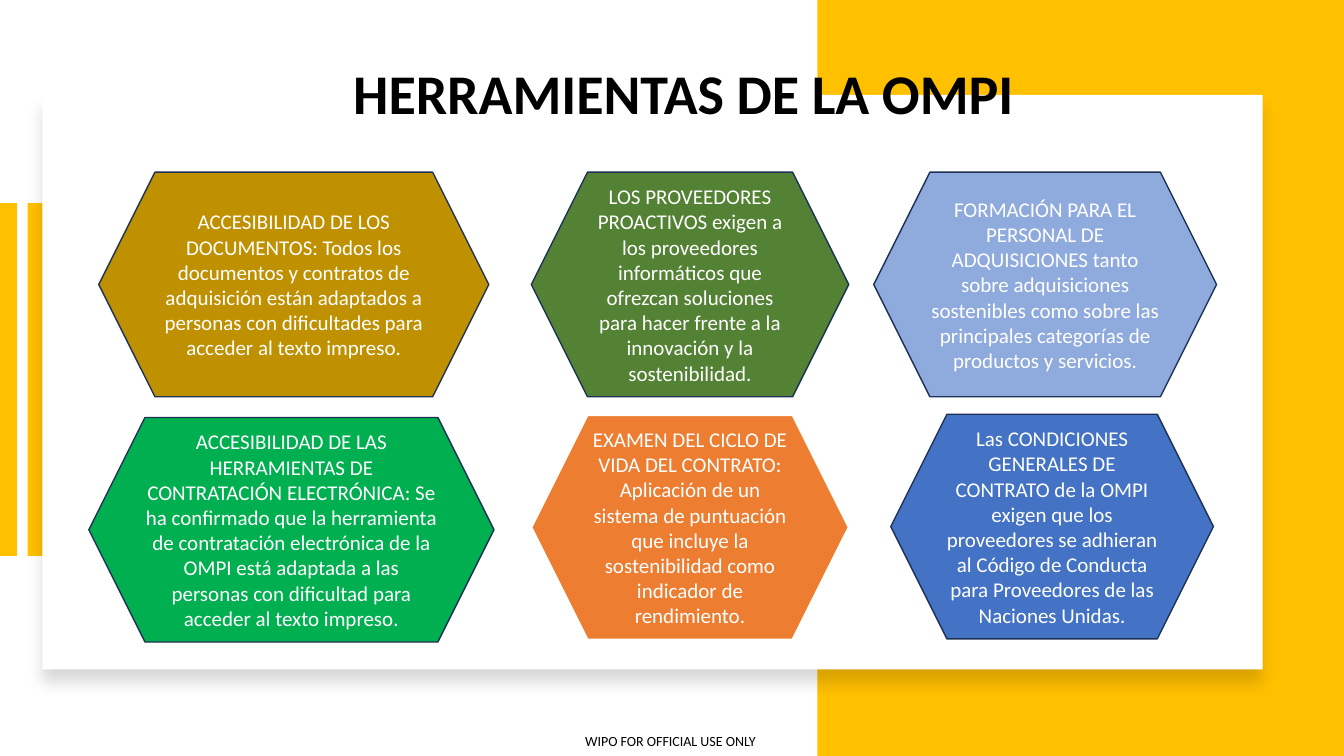
from lxml.etree import SubElement
from pptx import Presentation
from pptx.dml.color import RGBColor
from pptx.enum.shapes import MSO_SHAPE
from pptx.enum.text import MSO_ANCHOR, PP_ALIGN
from pptx.oxml.ns import qn
from pptx.util import Cm, Pt

TITLE = "HERRAMIENTAS DE LA OMPI"
FOOTER = "WIPO FOR OFFICIAL USE ONLY"
FONT = "Calibri"
YELLOW, WHITE, BLACK, NAVY = "FFC000", "FFFFFF", "000000", "1E3256"

# Lengths in cm
PAGE_WIDTH, PAGE_HEIGHT = 33.87, 19.05
HEXAGON_HEIGHT = 5.66
DEFAULT_INSETS = (0.25, 0.13)

# Left, top, width, fill, outline, outline points, (side, top) insets, text
TOOLS = [
    (2.49, 4.34, 9.83, "BF9000", NAVY, 1, (0.1, 0.13),
     "ACCESIBILIDAD DE LOS DOCUMENTOS: Todos los documentos y contratos de "
     "adquisición están adaptados a personas con dificultades para acceder "
     "al texto impreso."),
    (13.39, 4.34, 8, "548235", NAVY, 1, DEFAULT_INSETS,
     "LOS PROVEEDORES PROACTIVOS exigen a los proveedores informáticos que "
     "ofrezcan soluciones para hacer frente a la innovación y la "
     "sostenibilidad."),
    (22.02, 4.34, 8.64, "8FAADC", NAVY, 1, DEFAULT_INSETS,
     "FORMACIÓN PARA EL PERSONAL DE ADQUISICIONES tanto sobre adquisiciones "
     "sostenibles como sobre las principales categorías de productos y "
     "servicios."),
    (2.24, 10.52, 10.21, "00B050", NAVY, 1, (0.1, 0.2),
     "ACCESIBILIDAD DE LAS HERRAMIENTAS DE CONTRATACIÓN ELECTRÓNICA: Se ha "
     "confirmado que la herramienta de contratación electrónica de la OMPI "
     "está adaptada a las personas con dificultad para acceder al texto "
     "impreso."),
    (13.39, 10.46, 8, "ED7D31", WHITE, 1.5, DEFAULT_INSETS,
     "EXAMEN DEL CICLO DE VIDA DEL CONTRATO: Aplicación de un sistema de "
     "puntuación que incluye la sostenibilidad como indicador de "
     "rendimiento."),
    (22.45, 10.44, 8.13, "4472C4", NAVY, 1, DEFAULT_INSETS,
     "Las CONDICIONES GENERALES DE CONTRATO de la OMPI exigen que los "
     "proveedores se adhieran al Código de Conducta para Proveedores de las "
     "Naciones Unidas."),
]


def color(hex_code):
    return RGBColor.from_string(hex_code)


def add_box(page, kind, left, top, width, height, fill):
    box = page.shapes.add_shape(kind, Cm(left), Cm(top), Cm(width), Cm(height))
    box.shadow.inherit = False
    box.fill.solid()
    box.fill.fore_color.rgb = color(fill)
    box.line.fill.background()
    return box


def write(box, text, size, text_color, insets=DEFAULT_INSETS, bold=False):
    frame = box.text_frame
    frame.word_wrap = True
    frame.vertical_anchor = MSO_ANCHOR.MIDDLE
    frame.margin_left = frame.margin_right = Cm(insets[0])
    frame.margin_top = frame.margin_bottom = Cm(insets[1])
    para = frame.paragraphs[0]
    para.text = text
    para.alignment = PP_ALIGN.CENTER
    para.font.name = FONT
    para.font.size = Pt(size)
    para.font.bold = bold
    para.font.color.rgb = color(text_color)
    return para


def add_soft_shadow(box, opacity, blur, distance):
    effects = box._element.spPr.find(qn("a:effectLst"))
    shadow = SubElement(effects, qn("a:outerShdw"), blurRad=str(Pt(blur)),
                        dist=str(Pt(distance)), dir="5400000",
                        algn="ctr", rotWithShape="0")
    tint = SubElement(shadow, qn("a:srgbClr"), val=BLACK)
    SubElement(tint, qn("a:alpha"), val=str(opacity * 1000))


deck = Presentation()
deck.slide_width, deck.slide_height = Cm(PAGE_WIDTH), Cm(PAGE_HEIGHT)
page = deck.slides.add_slide(deck.slide_layouts[6])

# Footer
footer = page.shapes.add_textbox(Cm(14.33), Cm(18.31), Cm(5.13), Cm(0.74))
write(footer, FOOTER, 10, BLACK, insets=(0, 0))

# Yellow panel and side bars
panel_left = 20.6
add_box(page, MSO_SHAPE.RECTANGLE, panel_left, 0,
        PAGE_WIDTH - panel_left, PAGE_HEIGHT, YELLOW)
for bar_left in (0, 0.7):
    add_box(page, MSO_SHAPE.RECTANGLE, bar_left, 5.12, 0.43, 8.89, YELLOW)

# White card
card = add_box(page, MSO_SHAPE.RECTANGLE, 1.07, 2.39, 30.75, 14.48, WHITE)
add_soft_shadow(card, opacity=15, blur=11, distance=10)

# Hexagons
for left, top, width, fill, outline, points, insets, text in TOOLS:
    hexagon = add_box(page, MSO_SHAPE.HEXAGON, left, top, width,
                      HEXAGON_HEIGHT, fill)
    hexagon.line.color.rgb = color(outline)
    hexagon.line.width = Pt(points)
    write(hexagon, text, 15, WHITE, insets)

# Title
title = page.shapes.add_textbox(Cm(2.62), Cm(0.91), Cm(29.21), Cm(3.02))
write(title, TITLE, 40, BLACK, bold=True).line_spacing = 0.9

deck.save("out.pptx")
